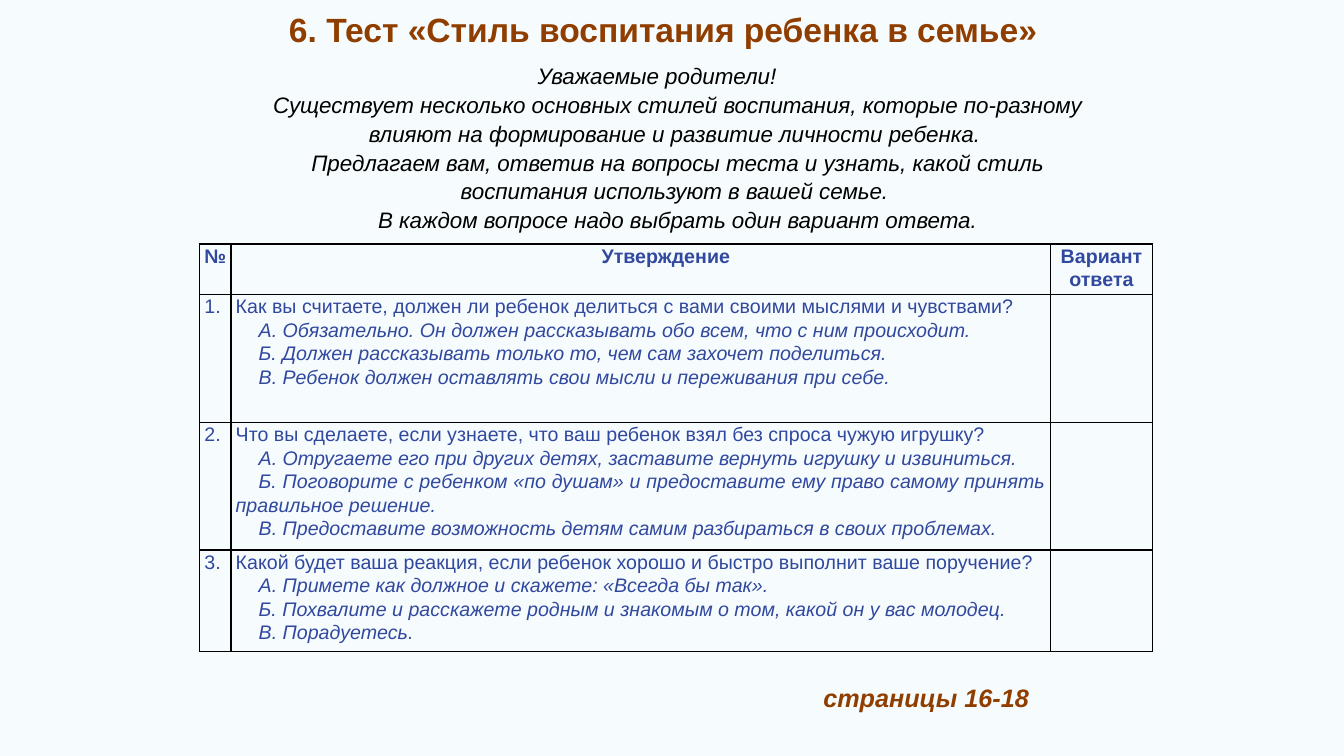
from typing import NamedTuple

from lxml.etree import SubElement
from pptx import Presentation
from pptx.dml.color import RGBColor
from pptx.enum.text import MSO_ANCHOR, MSO_AUTO_SIZE, PP_ALIGN as Align
from pptx.oxml.ns import qn
from pptx.util import Cm, Pt

BROWN, BLUE, BLACK, PALE = "903E00", "31489F", "000000", "F6FCFE"


class Style(NamedTuple):
    size: float
    color: str
    bold: bool = False
    italic: bool = False
    align: Align = Align.LEFT
    margin: float = 0  # cm
    indent: float = 0  # cm, first line
    spacing: float = 1.0
    after: float = 0


class Label(NamedTuple):
    text: str
    left: float
    top: float
    width: float
    height: float
    style: Style


class Question(NamedTuple):
    text: str
    answers: tuple[str, ...]


LABELS = [
    Label("6. Тест «Стиль воспитания ребенка в семье» ", 4.83, 0.1, 24, 1.28,
          Style(24, BROWN, bold=True, align=Align.CENTER)),
    Label("страницы 16-18", 20.5, 17.07, 7.54, 1.02,
          Style(18, BROWN, bold=True, italic=True)),
]

INTRO = "\v".join([
    "Уважаемые родители! ",
    "Существует несколько основных стилей воспитания, которые по-разному "
    "влияют на формирование и развитие личности ребенка. ",
    "Предлагаем вам, ответив на вопросы теста и узнать, какой стиль "
    "воспитания используют в вашей семье. ",
    "В каждом вопросе надо выбрать один вариант ответа.",
])
INTRO_STYLE = Style(16, BLACK, italic=True, align=Align.CENTER,
                    margin=0.89, indent=-0.89, spacing=1.07, after=8)

HEAD = Style(14, BLUE, bold=True, align=Align.CENTER, spacing=1.07)
BODY = Style(14, BLUE, align=Align.JUSTIFY, spacing=1.07)
NUMBER = BODY._replace(margin=0.97, indent=-0.97)
ANSWER = BODY._replace(italic=True, indent=0.58)

HEADERS = [("№", HEAD), ("Утверждение", HEAD._replace(margin=1.27)),
           ("Вариант ответа", HEAD)]
COL_WIDTHS = [0.79, 20.65, 2.58]
ROW_HEIGHTS = [1.25, 3.22, 3.22, 2.55]
QUESTIONS = [
    Question("Как вы считаете, должен ли ребенок делиться с вами своими мыслями и чувствами?", (
        "A. Обязательно. Он должен рассказывать обо всем, что с ним происходит.",
        "Б. Должен рассказывать только то, чем сам захочет поделиться.",
        "B. Ребенок должен оставлять свои мысли и переживания при себе.")),
    Question("Что вы сделаете, если узнаете, что ваш ребенок взял без спроса чужую игрушку?", (
        "A. Отругаете его при других детях, заставите вернуть игрушку и извиниться.",
        "Б. Поговорите с ребенком «по душам» и предоставите ему право самому "
        "принять правильное решение.",
        "B. Предоставите возможность детям самим разбираться в своих проблемах.")),
    Question("Какой будет ваша реакция, если ребенок хорошо и быстро выполнит ваше поручение?", (
        "A. Примете как должное и скажете: «Всегда бы так».",
        "Б. Похвалите и расскажете родным и знакомым о том, какой он у вас молодец.",
        "B. Порадуетесь.")),
]


def rgb(color: str) -> RGBColor:
    return RGBColor.from_string(color)


def write(tf, lines: list[tuple[str, Style]]) -> None:
    """Fill a text frame with one styled paragraph per line."""
    for i, (text, st) in enumerate(lines):
        p = tf.add_paragraph() if i else tf.paragraphs[0]
        p.text = text
        p.alignment, p.line_spacing = st.align, st.spacing
        p.space_before, p.space_after = Pt(0), Pt(st.after)
        pPr = p._p.get_or_add_pPr()
        pPr.set("marL", str(Cm(st.margin)))
        pPr.set("indent", str(Cm(st.indent)))
        f = p.font
        f.name, f.size, f.bold, f.italic = "Arial", Pt(st.size), st.bold, st.italic
        f.color.rgb = rgb(st.color)


def add_label(s, label: Label) -> None:
    box = s.shapes.add_textbox(Cm(label.left), Cm(label.top),
                               Cm(label.width), Cm(label.height))
    tf = box.text_frame
    tf.word_wrap = True
    tf.auto_size = MSO_AUTO_SIZE.SHAPE_TO_FIT_TEXT
    write(tf, [(label.text, label.style)])


def format_cell(cell) -> None:
    """Narrow margins, black borders and no fill."""
    cell.margin_left = cell.margin_right = Cm(0.12)
    cell.margin_top = cell.margin_bottom = 0
    tcPr = cell._tc.get_or_add_tcPr()
    for side in ("lnL", "lnR", "lnT", "lnB"):
        ln = SubElement(tcPr, qn(f"a:{side}"), w=str(Pt(1)))
        fill = SubElement(ln, qn("a:solidFill"))
        SubElement(fill, qn("a:srgbClr"), val=BLACK)
    cell.fill.background()


def add_test_table(s) -> None:
    table = s.shapes.add_table(len(ROW_HEIGHTS), len(COL_WIDTHS), Cm(5.03), Cm(6.15),
                               Cm(sum(COL_WIDTHS)), Cm(sum(ROW_HEIGHTS))).table
    table.first_row = table.horz_banding = False
    for col, width in zip(table.columns, COL_WIDTHS):
        col.width = Cm(width)
    for row, height in zip(table.rows, ROW_HEIGHTS):
        row.height = Cm(height)
    for cell in table.iter_cells():
        format_cell(cell)
    for c, header in enumerate(HEADERS):
        write(table.cell(0, c).text_frame, [header])
    for n, q in enumerate(QUESTIONS, 1):
        write(table.cell(n, 0).text_frame, [(f"{n}. ", NUMBER)])
        write(table.cell(n, 1).text_frame,
              [(q.text, BODY)] + [(answer, ANSWER) for answer in q.answers])


def main() -> None:
    prs = Presentation()
    prs.slide_width, prs.slide_height = Cm(33.87), Cm(19.05)
    s = prs.slides.add_slide(prs.slide_layouts[5])
    s.background.fill.solid()
    s.background.fill.fore_color.rgb = rgb(PALE)

    # Introduction in the title placeholder
    title = s.shapes.title
    title.left, title.top = Cm(5.23), Cm(1.4)
    title.width, title.height = Cm(22.81), Cm(2.39)
    tf = title.text_frame
    tf.word_wrap, tf.auto_size = True, MSO_AUTO_SIZE.NONE
    tf.vertical_anchor = MSO_ANCHOR.TOP
    write(tf, [(INTRO, INTRO_STYLE)])

    # Heading and page reference
    for label in LABELS:
        add_label(s, label)

    # Test questions
    add_test_table(s)
    prs.save("out.pptx")


if __name__ == "__main__":
    main()
